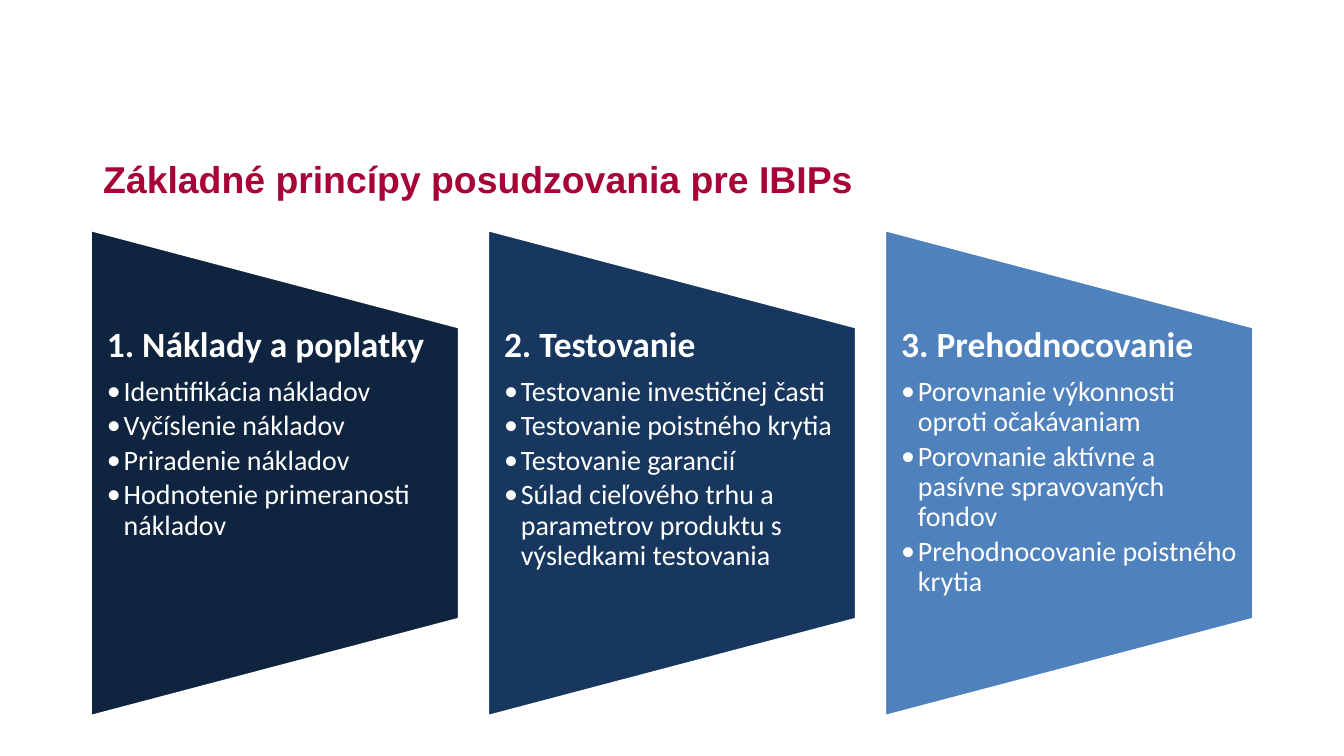
from lxml.etree import SubElement
from pptx import Presentation
from pptx.dml.color import RGBColor
from pptx.enum.shapes import MSO_SHAPE as Shape
from pptx.enum.text import MSO_ANCHOR as Anchor
from pptx.oxml.ns import qn
from pptx.util import Emu, Pt

EMU_PER_PX = 4572  # 200 px to the inch
WHITE = RGBColor(0xFF, 0xFF, 0xFF)
CRIMSON = RGBColor(0xA7, 0x03, 0x36)
NAVY = RGBColor(0x0F, 0x24, 0x3E)
DARK_BLUE = RGBColor(0x17, 0x37, 0x5E)
MID_BLUE = RGBColor(0x4F, 0x81, 0xBD)

PANEL_LEFT, PANEL_PITCH = 134, 591
PANEL_WIDTH, PANEL_HEIGHT, PANEL_TOP = 550, 726, 341
TEXT_TOP, TEXT_HEIGHT = 486, 436

PANELS = [
    (NAVY, "1. Náklady a poplatky", [
        "Identifikácia nákladov",
        "Vyčíslenie nákladov",
        "Priradenie nákladov",
        "Hodnotenie primeranosti nákladov",
    ]),
    (DARK_BLUE, "2. Testovanie", [
        "Testovanie investičnej časti",
        "Testovanie poistného krytia",
        "Testovanie garancií",
        "Súlad cieľového trhu a parametrov produktu s výsledkami testovania",
    ]),
    (MID_BLUE, "3. Prehodnocovanie", [
        "Porovnanie výkonnosti oproti očakávaniam",
        "Porovnanie aktívne a pasívne spravovaných fondov",
        "Prehodnocovanie poistného krytia",
    ]),
]


def px(length):
    return Emu(length * EMU_PER_PX)


def write(paragraph, text, *, size, font="Calibri", color=WHITE, bold=False,
          line_spacing=None, space_after=None, bullet_indent=None):
    if bullet_indent:
        paragraph.level = 1
        properties = paragraph._p.get_or_add_pPr()
        properties.set("marL", str(px(bullet_indent)))
        properties.set("indent", str(px(-bullet_indent)))
        SubElement(properties, qn("a:buFont")).set("typeface", font)
        SubElement(properties, qn("a:buChar")).set("char", "•")
    if line_spacing:
        paragraph.line_spacing = line_spacing
    if space_after:
        paragraph.space_after = Pt(space_after)
    run = paragraph.add_run()
    run.text = text
    run.font.name = font
    run.font.size = Pt(size)
    run.font.bold = bold
    run.font.color.rgb = color


class SlideBuilder:
    heading_style = dict(size=19, bold=True, line_spacing=0.9, space_after=6.65)
    bullet_style = dict(size=15, line_spacing=0.9, space_after=2.25, bullet_indent=25)

    def __init__(self, slide):
        self.slide = slide

    def text_frame(self, left, top, width, height, *, inset=20, anchor=Anchor.TOP):
        box = self.slide.shapes.add_textbox(px(left), px(top), px(width), px(height))
        frame = box.text_frame
        frame.word_wrap = True
        frame.vertical_anchor = anchor
        frame.margin_left = frame.margin_right = px(inset)
        frame.margin_top = frame.margin_bottom = 0
        return frame

    def title(self, text):
        frame = self.text_frame(134, 236, 1732, 60, anchor=Anchor.MIDDLE)
        write(frame.paragraphs[0], text, size=20, font="Arial", color=CRIMSON, bold=True)

    def trapezoid(self, left, color):
        """Add a panel narrowing to the right: a shape turned about its centre."""
        offset = (PANEL_HEIGHT - PANEL_WIDTH) // 2
        shape = self.slide.shapes.add_shape(
            Shape.FLOWCHART_MANUAL_OPERATION, px(left - offset), px(PANEL_TOP + offset),
            px(PANEL_HEIGHT), px(PANEL_WIDTH))
        shape.rotation = 270
        shape.shadow.inherit = False
        shape.fill.solid()
        shape.fill.fore_color.rgb = color
        shape.line.color.rgb = WHITE
        shape.line.width = Pt(2)

    def panel(self, left, color, heading, bullets):
        self.trapezoid(left, color)
        frame = self.text_frame(left, TEXT_TOP, PANEL_WIDTH, TEXT_HEIGHT, inset=25)
        write(frame.paragraphs[0], heading, **self.heading_style)
        for bullet in bullets:
            write(frame.add_paragraph(), bullet, **self.bullet_style)


def main():
    presentation = Presentation()
    presentation.slide_width = px(2000)
    presentation.slide_height = px(1125)
    builder = SlideBuilder(presentation.slides.add_slide(presentation.slide_layouts[6]))
    builder.title("Základné princípy posudzovania pre IBIPs")
    for index, (color, heading, bullets) in enumerate(PANELS):
        builder.panel(PANEL_LEFT + index * PANEL_PITCH, color, heading, bullets)
    presentation.save("out.pptx")


if __name__ == "__main__":
    main()
